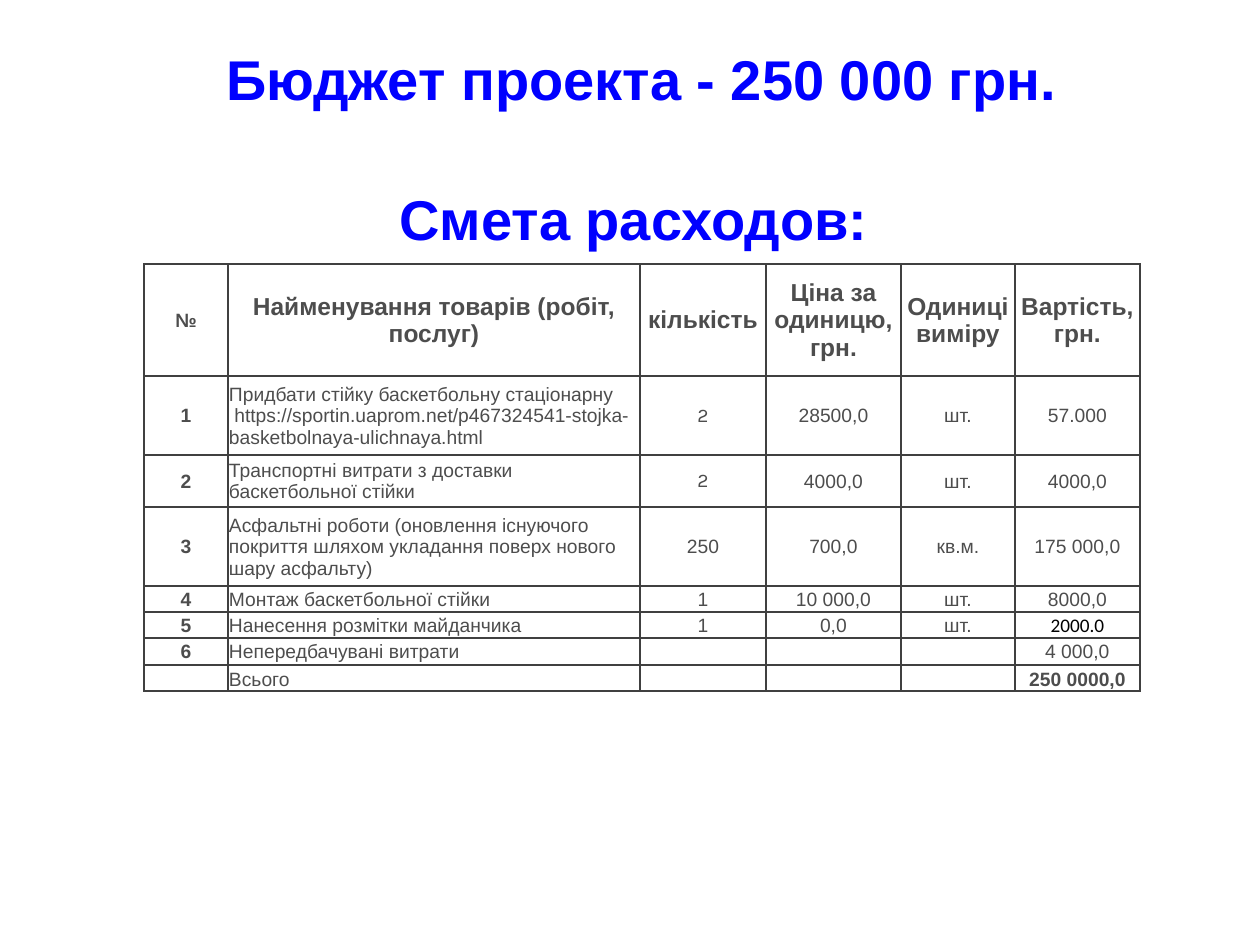
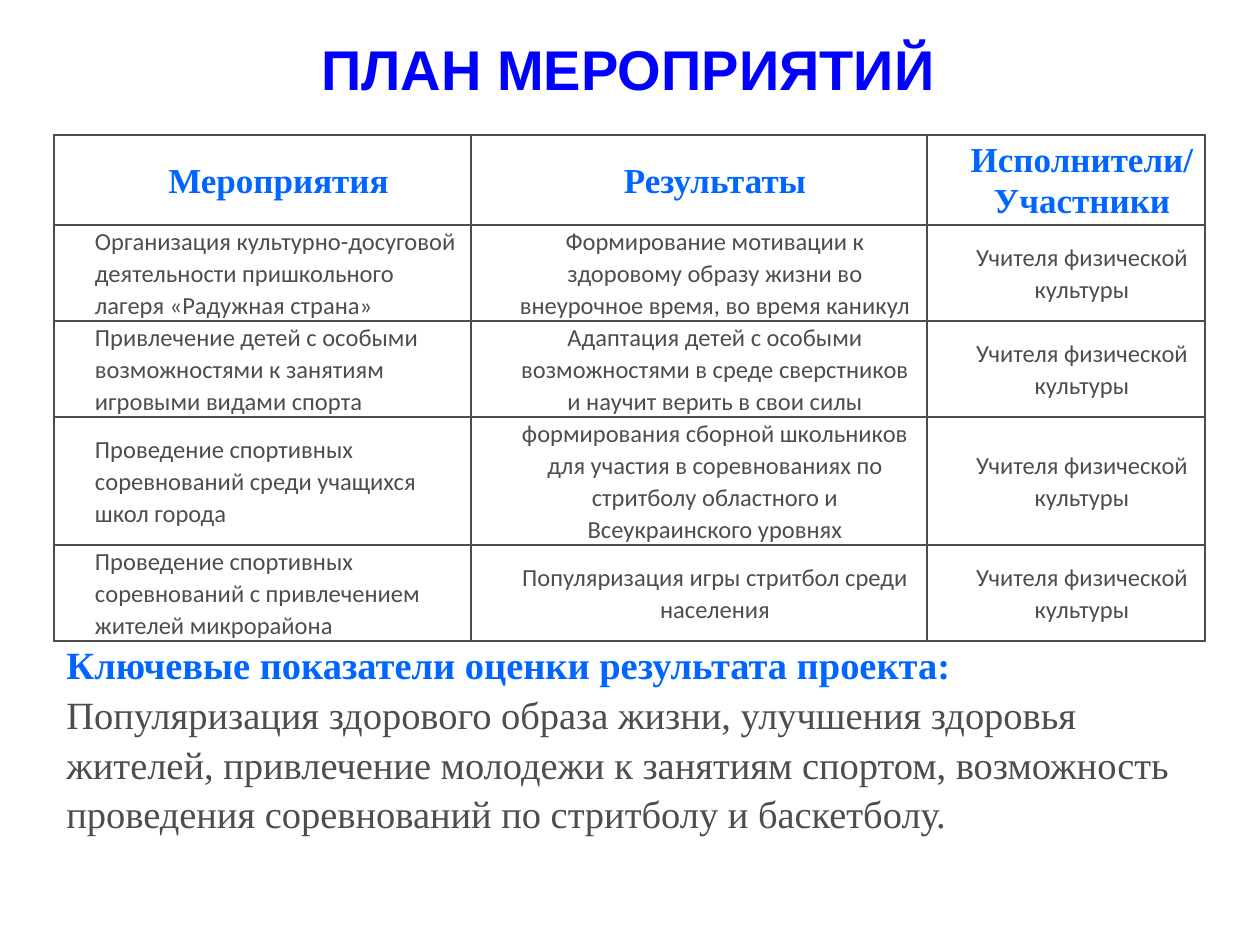
"""Builds the budget and activity plan slides of a basketball court project."""
from dataclasses import dataclass, replace
from itertools import product

from lxml.etree import SubElement
from pptx import Presentation
from pptx.dml.color import RGBColor
from pptx.enum.text import MSO_ANCHOR as Anchor, PP_ALIGN as Align
from pptx.oxml.ns import qn
from pptx.util import Emu, Pt

PX_PER_INCH = 126
BLUE = RGBColor(0x00, 0x00, 0xFF)
SKY = RGBColor(0x00, 0x66, 0xFF)
GRAY = RGBColor(0x4D, 0x4D, 0x4D)
DARK = RGBColor(0x40, 0x40, 0x40)
BLACK = RGBColor(0x00, 0x00, 0x00)


@dataclass(frozen=True)
class TextStyle:
    font: str
    size: int
    color: RGBColor
    bold: bool = False


@dataclass(frozen=True)
class CellFormat:
    style: TextStyle
    align: Align = Align.CENTER
    anchor: Anchor = Anchor.MIDDLE


@dataclass(frozen=True)
class TableLook:
    border: RGBColor
    margins: tuple
    indent: int = 0
    spacing: float = 1.0


TITLE = TextStyle("Arial", 32, BLUE, True)
BODY = TextStyle("Arial", 11, GRAY)
BODY_BOLD = replace(BODY, bold=True)
BUDGET_HEAD = replace(BODY_BOLD, size=14)
KARLA = replace(BODY, font="Karla")
CALIBRI_BLACK = replace(BODY, font="Calibri", color=BLACK)
PLAN_HEAD = TextStyle("Times New Roman", 20, SKY, True)
PLAN_BODY = TextStyle("Calibri", 14, GRAY)
KEY_HEAD = replace(PLAN_HEAD, size=22)
KEY_BODY = replace(KEY_HEAD, color=GRAY, bold=False)

BUDGET_LOOK = TableLook(DARK, (1, 1, 1, 0))
PLAN_LOOK = TableLook(GRAY, (9, 0, 9, 0), 32, 1.07)

BUDGET = [
    ["№", "Найменування товарів (робіт, послуг)", "кількість",
     "Ціна за одиницю, грн.", "Одиниці виміру", "Вартість, грн."],
    ["1", "Придбати стійку баскетбольну стаціонарну\n"
     " https://sportin.uaprom.net/p467324541-stojka-basketbolnaya-ulichnaya.html",
     "2", "28500,0", "шт.", "57.000"],
    ["2", "Транспортні витрати з доставки баскетбольної стійки",
     "2", "4000,0", "шт.", "4000,0"],
    ["3", "Асфальтні роботи (оновлення існуючого покриття шляхом укладання "
     "поверх нового шару асфальту)", "250", "700,0", "кв.м.", "175 000,0"],
    ["4", "Монтаж баскетбольної стійки", "1", "10 000,0", "шт.", "8000,0"],
    ["5", "Нанесення розмітки майданчика", "1", "0,0", "шт.", "2000.0"],
    ["6", "Непередбачувані витрати", "", "", "", "4 000,0"],
    ["", "Всього", "", "", "", "250 0000,0"],
]
TEACHERS = "Учителя физической культуры"
PLAN = [
    ["Мероприятия", "Результаты", "Исполнители/Участники"],
    ["Организация культурно-досуговой деятельности пришкольного лагеря "
     "«Радужная страна»",
     "Формирование мотивации к здоровому образу жизни во внеурочное время, "
     "во время каникул", TEACHERS],
    ["Привлечение детей с особыми возможностями к занятиям игровыми видами спорта",
     "Адаптация детей с особыми возможностями в среде сверстников и научит "
     "верить в свои силы", TEACHERS],
    ["Проведение спортивных соревнований среди учащихся школ города",
     "формирования сборной школьников для участия в соревнованиях по стритболу "
     "областного и Всеукраинского уровнях", TEACHERS],
    ["Проведение спортивных соревнований с привлечением жителей микрорайона",
     "Популяризация игры стритбол среди населения", TEACHERS],
]


def px(length):
    return Emu(round(length * 914400 / PX_PER_INCH))


def budget_format(row, column):
    special = {(0, 0): BODY_BOLD, (1, 2): KARLA, (2, 2): KARLA,
               (5, 5): CALIBRI_BLACK, (7, 5): BODY_BOLD}
    usual = BUDGET_HEAD if row == 0 else BODY_BOLD if column == 0 else BODY
    return CellFormat(special.get((row, column), usual),
                      Align.LEFT if row and column == 1 else Align.CENTER,
                      Anchor.BOTTOM if row == 7 else Anchor.MIDDLE)


def plan_format(row, column):
    return CellFormat(PLAN_BODY if row else PLAN_HEAD,
                      Align.LEFT if row and column == 0 else Align.CENTER)


class Deck:
    def __init__(self):
        self.presentation = Presentation()
        self.presentation.slide_width = px(1260)
        self.presentation.slide_height = px(945)
        self.slide = None

    def new_slide(self):
        layout = self.presentation.slide_layouts[6]
        self.slide = self.presentation.slides.add_slide(layout)

    def add_run(self, paragraph, text, style):
        run = paragraph.add_run()
        run.text = text
        run.font.name = style.font
        run.font.size = Pt(style.size)
        run.font.bold = style.bold
        run.font.color.rgb = style.color

    def fill_frame(self, frame, lines, align, spacing, gap=0):
        for index, (text, style) in enumerate(lines):
            paragraph = frame.add_paragraph() if index else frame.paragraphs[0]
            paragraph.alignment = align
            paragraph.line_spacing = spacing
            if index:
                paragraph.space_before = Pt(gap)
            if text:
                self.add_run(paragraph, text, style)
            else:
                ending = SubElement(paragraph._p, qn("a:endParaRPr"))
                ending.set("sz", str(style.size * 100))

    def text(self, box, lines, align=Align.LEFT, anchor=Anchor.TOP, gap=0):
        frame = self.slide.shapes.add_textbox(*map(px, box)).text_frame
        frame.word_wrap = True
        frame.vertical_anchor = anchor
        self.fill_frame(frame, lines, align, 1.08, gap)

    def title(self, box, lines, align=Align.LEFT, gap=0):
        self.text(box, [(line, TITLE) for line in lines], align, Anchor.MIDDLE, gap)

    def borders(self, cell, color):
        properties = cell._tc.get_or_add_tcPr()
        for index, side in enumerate(("lnL", "lnR", "lnT", "lnB")):
            line = SubElement(properties, qn(f"a:{side}"), w=str(Pt(1)))
            fill = SubElement(line, qn("a:solidFill"))
            SubElement(fill, qn("a:srgbClr"), val=str(color))
            properties.insert(index, line)

    def table(self, left, top, widths, heights, rows, look, cell_format):
        box = map(px, (left, top, sum(widths), sum(heights)))
        table = self.slide.shapes.add_table(len(heights), len(widths), *box).table
        table.first_row = table.horz_banding = False
        for column, width in zip(table.columns, widths):
            column.width = px(width)
        for row, height in zip(table.rows, heights):
            row.height = px(height)
        for row, column in product(range(len(heights)), range(len(widths))):
            cell = table.cell(row, column)
            self.cell(cell, rows[row][column], look, cell_format(row, column))

    def cell(self, cell, text, look, layout):
        cell.fill.background()
        self.borders(cell, look.border)
        (cell.margin_left, cell.margin_top,
         cell.margin_right, cell.margin_bottom) = map(px, look.margins)
        cell.vertical_anchor = layout.anchor
        lines = [(line, layout.style) for line in text.split("\n")]
        self.fill_frame(cell.text_frame, lines, layout.align, look.spacing)
        if look.indent:
            for paragraph in cell.text_frame.paragraphs:
                paragraph._p.get_or_add_pPr().set("marL", str(px(look.indent)))


def budget_slide(deck):
    deck.new_slide()
    deck.title((91, 86, 1101, 118),
               ["Бюджет проекта - 250 000 грн.", "Смета расходов: "],
               Align.CENTER, gap=38.5)
    deck.table(144, 264, (84, 412, 126, 135, 114, 125),
               (112, 79, 52, 79, 26, 26, 27, 26),
               BUDGET, BUDGET_LOOK, budget_format)


def plan_slide(deck):
    deck.new_slide()
    deck.title((309, 16, 643, 98), ["ПЛАН МЕРОПРИЯТИЙ"])
    deck.table(54, 135, (417, 456, 278), (83, 96, 96, 128, 96),
               PLAN, PLAN_LOOK, plan_format)
    deck.text((54, 631, 1181, 199), [
        ("Ключевые показатели оценки результата проекта:", KEY_HEAD),
        ("Популяризация здорового образа жизни, улучшения здоровья жителей, "
         "привлечение молодежи к занятиям спортом, возможность проведения "
         "соревнований по стритболу и баскетболу.", KEY_BODY)])


def main():
    deck = Deck()
    budget_slide(deck)
    plan_slide(deck)
    deck.presentation.save("out.pptx")


if __name__ == "__main__":
    main()
